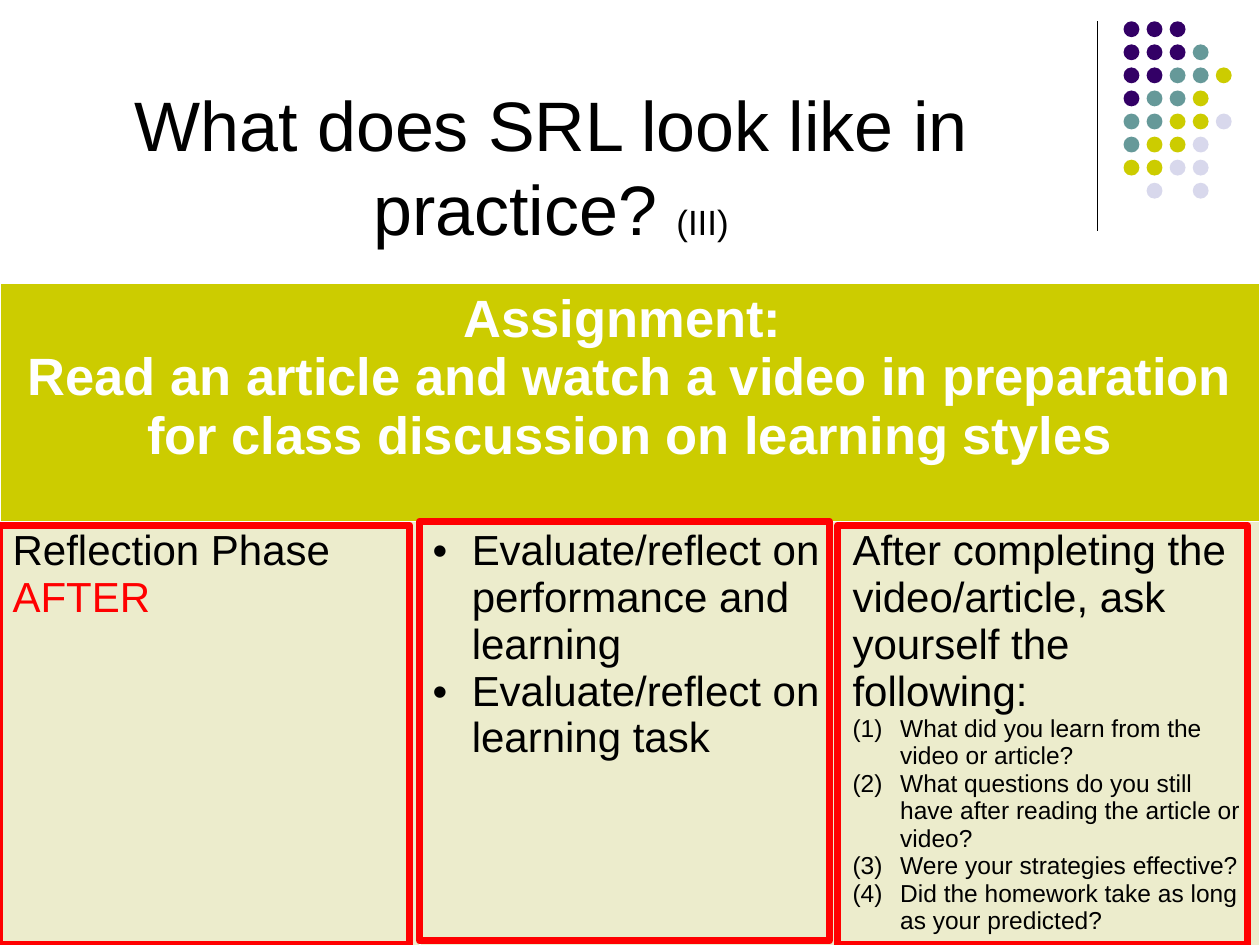
from dataclasses import dataclass
from typing import Optional

from lxml.etree import SubElement
from pptx import Presentation
from pptx.dml.color import RGBColor
from pptx.enum.shapes import MSO_CONNECTOR as Connector, MSO_SHAPE as Preset
from pptx.enum.text import MSO_ANCHOR as Anchor, PP_ALIGN as Align
from pptx.oxml.ns import qn
from pptx.util import Cm, Pt

COLORS = {
    "black": "000000", "white": "FFFFFF", "red": "FF0000", "purple": "330066",
    "teal": "669999", "olive": "CCCC00", "lavender": "D8D8EC", "cream": "ECECCC",
}
DOT_COLORS = {"P": "purple", "T": "teal", "O": "olive", "L": "lavender"}
DOT_ROWS = ["PPP", "PPPT", "PPTTO", "PTTO", "TTOOL", "TOOL", "OOLL", ".L.L"]


@dataclass
class Line:
    text: str
    size: float = 24
    color: str = "black"
    marker: Optional[str] = None
    indent: float = 0


@dataclass
class Frame:
    left: float
    top: float


PHASE = [Line("Reflection Phase"), Line("AFTER", color="red")]
TASKS = [
    Line(text, marker="bullet", indent=0.79)
    for text in ("Evaluate/reflect on performance and learning", "Evaluate/reflect on learning task")
]
QUESTIONS = [Line("After completing the video/article, ask yourself the following:")] + [
    Line(text, size=14, marker="number", indent=0.96)
    for text in (
        "What did you learn from the video or article?",
        "What questions do you still have after reading the article or video?",
        "Were your strategies effective?",
        "Did the homework take as long as your predicted?",
    )
]
FRAMES = [Frame(0, 10.59), Frame(8.46, 10.51), Frame(16.89, 10.59)]


def rgb(name: str) -> RGBColor:
    """Return the named palette colour."""
    return RGBColor.from_string(COLORS[name])


def add_text(paragraph, text: str, *, size: float, color: str = "black", bold: bool = False,
             align=Align.LEFT, marker: Optional[str] = None, indent: float = 0) -> None:
    """Add a formatted run to a paragraph, with an optional list marker."""
    paragraph.alignment = align
    run = paragraph.add_run()
    run.text = text
    run.font.name = "Arial"
    run.font.size = Pt(size)
    run.font.bold = bold
    run.font.color.rgb = rgb(color)
    if marker:
        properties = paragraph._p.get_or_add_pPr()
        properties.set("marL", str(Cm(indent)))
        properties.set("indent", str(-Cm(indent)))
        SubElement(properties, qn("a:buFont")).set("typeface", "Arial")
        if marker == "bullet":
            SubElement(properties, qn("a:buChar")).set("char", "•")
        else:
            SubElement(properties, qn("a:buAutoNum")).set("type", "arabicParenBoth")


def fill_cell(cell, lines: list[Line], fill: str, bold: bool = False, align=Align.LEFT) -> None:
    """Colour a cell and write its lines."""
    cell.fill.solid()
    cell.fill.fore_color.rgb = rgb(fill)
    for index, line in enumerate(lines):
        frame = cell.text_frame
        paragraph = frame.add_paragraph() if index else frame.paragraphs[0]
        add_text(paragraph, line.text, size=line.size, color=line.color, bold=bold,
                 align=align, marker=line.marker, indent=line.indent)


def draw_ornament(slide) -> None:
    """Draw the vertical rule and the dot pattern."""
    rule = slide.shapes.add_connector(Connector.STRAIGHT, Cm(22.12), Cm(0.43), Cm(22.12), Cm(4.65))
    rule.line.color.rgb = rgb("black")
    rule.line.width = Pt(0.75)
    SubElement(rule._element.spPr, qn("a:effectLst"))
    dots = slide.shapes.add_group_shape().shapes
    pitch, diameter = 0.465, 0.32
    for row, codes in enumerate(DOT_ROWS):
        for column, code in enumerate(codes):
            if code in DOT_COLORS:
                dot = dots.add_shape(Preset.OVAL, Cm(22.65 + column * pitch),
                                     Cm(0.43 + row * pitch), Cm(diameter), Cm(diameter))
                dot.shadow.inherit = False
                dot.fill.solid()
                dot.fill.fore_color.rgb = rgb(DOT_COLORS[code])
                dot.line.fill.background()


def draw_title(slide) -> None:
    """Write the slide title."""
    frame = slide.shapes.add_textbox(Cm(0), Cm(1.47), Cm(22.22), Cm(3.69)).text_frame
    frame.word_wrap = True
    frame.vertical_anchor = Anchor.BOTTOM
    title = frame.paragraphs[0]
    add_text(title, "What does SRL look like in practice? ", size=40, align=Align.CENTER)
    add_text(title, "(III)", size=20, align=Align.CENTER)


def draw_table(slide) -> None:
    """Draw the assignment table."""
    table = slide.shapes.add_table(2, 3, Cm(0), Cm(5.71), Cm(25.4), Cm(13.34)).table
    for row, height in zip(table.rows, (4.8, 8.54)):
        row.height = Cm(height)
    heading = table.cell(0, 0)
    heading.merge(table.cell(0, 2))
    assignment = [
        Line(text, size=30, color="white")
        for text in (
            "Assignment: ",
            "Read an article and watch a video in preparation for class discussion on learning styles",
        )
    ]
    fill_cell(heading, assignment, "olive", bold=True, align=Align.CENTER)
    for column, lines in enumerate((PHASE, TASKS, QUESTIONS)):
        fill_cell(table.cell(1, column), lines, "cream")


def draw_frame(slide, frame: Frame) -> None:
    """Outline one table column in red."""
    outline = slide.shapes.add_shape(Preset.RECTANGLE, Cm(frame.left), Cm(frame.top), Cm(8.26), Cm(8.46))
    outline.shadow.inherit = False
    outline.fill.background()
    outline.line.color.rgb = rgb("red")
    outline.line.width = Pt(4)


def main() -> None:
    """Build and save the slide."""
    presentation = Presentation()
    presentation.slide_width, presentation.slide_height = Cm(25.4), Cm(19.05)
    slide = presentation.slides.add_slide(presentation.slide_layouts[6])
    draw_ornament(slide)
    draw_title(slide)
    draw_table(slide)
    for frame in FRAMES:
        draw_frame(slide, frame)
    presentation.save("out.pptx")


if __name__ == "__main__":
    main()
